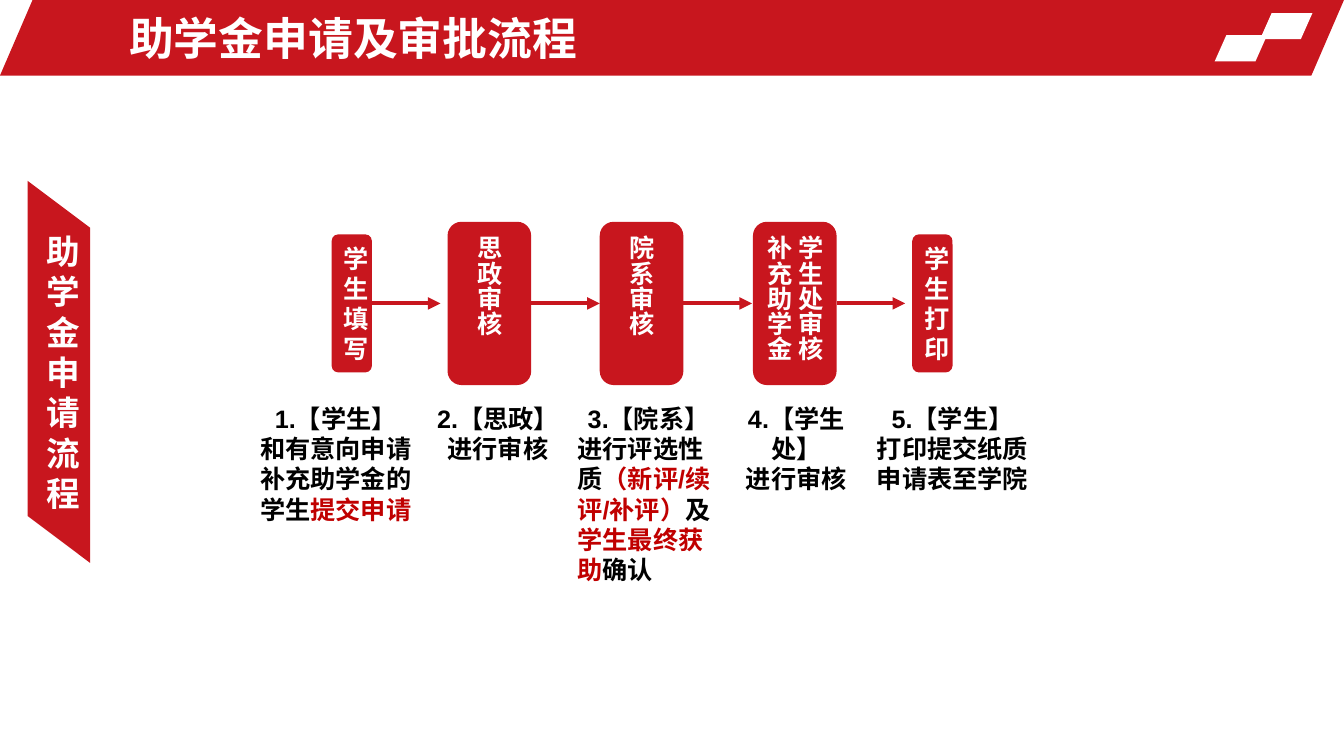
from dataclasses import dataclass

from lxml.etree import SubElement
from pptx import Presentation
from pptx.dml.color import RGBColor as RGB
from pptx.enum.shapes import MSO_CONNECTOR as Link, MSO_SHAPE as Kind
from pptx.enum.text import MSO_ANCHOR as Anchor, MSO_AUTO_SIZE as Fit, PP_ALIGN as Align
from pptx.oxml.ns import qn
from pptx.util import Inches, Pt


@dataclass(frozen=True)
class Theme:
    font: str = "Arial"
    red: RGB = RGB(0xC8, 0x16, 0x1E)
    accent: RGB = RGB(0xC0, 0, 0)
    white: RGB = RGB(255, 255, 255)
    black: RGB = RGB(0, 0, 0)
    head: int = 32
    side: int = 24
    body: int = 18
    line: int = 3


class Board:
    """A slide on a grid of 133.33 columns by 75 rows."""

    cols, rows = 133.33, 75

    def __init__(self, deck, theme):
        self.theme = theme
        self.slide = deck.slides.add_slide(deck.slide_layouts[5])
        self.shapes = self.slide.shapes
        self.col = deck.slide_width / self.cols
        self.row = deck.slide_height / self.rows

    def place(self, x, y, w, h):
        return (round(x * self.col), round(y * self.row),
                round(w * self.col), round(h * self.row))

    def style(self, run, size, color):
        font = run.font
        font.name, font.size, font.bold = self.theme.font, Pt(size), True
        font.color.rgb = color

    def put(self, frame, text, size, color, align):
        frame.text = text
        for para in frame.paragraphs:
            para.alignment = align
            for run in para.runs:
                self.style(run, size, color)

    def title(self, text, x, y, w, h):
        title = self.shapes.title
        title.left, title.top, title.width, title.height = self.place(x, y, w, h)
        frame = title.text_frame
        frame.auto_size, frame.vertical_anchor = Fit.NONE, Anchor.MIDDLE
        self.put(frame, text, self.theme.head, self.theme.white, Align.LEFT)
        self.shapes.element.append(title.element)  # bring above the banner

    def block(self, kind, x, y, w, h, fill, slant=None):
        shape = self.shapes.add_shape(kind, *self.place(x, y, w, h))
        shape.shadow.inherit = False
        shape.fill.solid()
        shape.fill.fore_color.rgb = fill
        shape.line.fill.background()
        if slant is not None:
            shape.adjustments[0] = slant
        return shape

    def label(self, shape, text, size, flow=None):
        frame = shape.text_frame
        frame.word_wrap, frame.vertical_anchor = True, Anchor.MIDDLE
        self.put(frame, text, size, self.theme.white, Align.CENTER)
        if flow:
            shape.element.txBody.bodyPr.set("vert", flow)

    def note(self, x, y, w, h, head, text, align):
        """Text between asterisks takes the accent colour."""
        frame = self.shapes.add_textbox(*self.place(x, y, w, h)).text_frame
        frame.word_wrap, frame.auto_size = True, Fit.SHAPE_TO_FIT_TEXT
        self.put(frame, head, self.theme.body, self.theme.black, Align.CENTER)
        para = frame.add_paragraph()
        para.alignment = align
        for i, part in enumerate(text.split("*")):
            if part:
                run = para.add_run()
                run.text = part
                color = self.theme.accent if i % 2 else self.theme.black
                self.style(run, self.theme.body, color)

    def arrow(self, x, y, w):
        left, top, width, _ = self.place(x, y, w, 0)
        link = self.shapes.add_connector(Link.STRAIGHT, left, top, left + width, top)
        link.line.color.rgb = self.theme.red
        link.line.width = Pt(self.theme.line)
        SubElement(link.get_or_add_ln(), qn("a:tailEnd"), type="triangle")
        SubElement(link.element.spPr, qn("a:effectLst"))


# Box centre, wide or narrow, box text, then note: left, width, height, head, body
STEPS = [
    (34.9, False, "学生填写", 24.2, 18.2, 13.1,
     "1.【学生】", "和有意向申请补充助学金的学生*提交申请*", Align.CENTER),
    (48.55, True, "思政审核", 42, 14.8, 7.1,
     "2.【思政】", "进行审核", Align.CENTER),
    (63.65, True, "院系审核", 56.3, 16.1, 19.2,
     "3.【院系】", "进行评选性质*（新评/续评/补评）*及*学生最终获助*确认", Align.LEFT),
    (78.85, True, "学生处审核\n补充助学金", 71.6, 14.8, 7.1,
     "4.【学生处】", "进行审核", Align.CENTER),
    (92.5, False, "学生打印", 85.8, 17.4, 10.1,
     "5.【学生】", "打印提交纸质申请表至学院", Align.CENTER),
]
MID, NOTE, REACH = 30.1, 39.5, 6.8


def main():
    deck = Presentation()
    deck.slide_width, deck.slide_height = Inches(13.333), Inches(7.5)
    theme = Theme()
    board = Board(deck, theme)

    # Banner with its two white tiles, and the title
    board.block(Kind.PARALLELOGRAM, 0, 0, board.cols, 7.5, theme.red, 0.431)
    for x, y in ((125, 1.3), (120.5, 3.5)):
        board.block(Kind.PARALLELOGRAM, x, y, 5.2, 2.6, theme.white, 0.444)
    board.title("助学金申请及审批流程", 11.8, 0.5, 96.1, 6.5)

    # Side ribbon
    side = board.block(Kind.PARALLELOGRAM, -13.1, 33.8, 37.9, 6.2, theme.red, 0.75)
    side.rotation = 90
    board.label(side, "助学金申请流程", theme.side, "vert270")

    # Steps, each with its note and the arrow to the next
    for i, (mid, wide, name, x, w, h, head, text, align) in enumerate(STEPS):
        wid, high = (8.3, 16.2) if wide else (4, 13.7)
        box = board.block(Kind.ROUNDED_RECTANGLE, mid - wid / 2, MID - high / 2,
                          wid, high, theme.red)
        board.label(box, name, theme.body, "eaVert" if wide else None)
        board.note(x, NOTE, w, h, head, text, align)
        if i < len(STEPS) - 1:
            board.arrow(mid + wid / 2, MID, REACH)

    deck.save("out.pptx")


if __name__ == "__main__":
    main()
